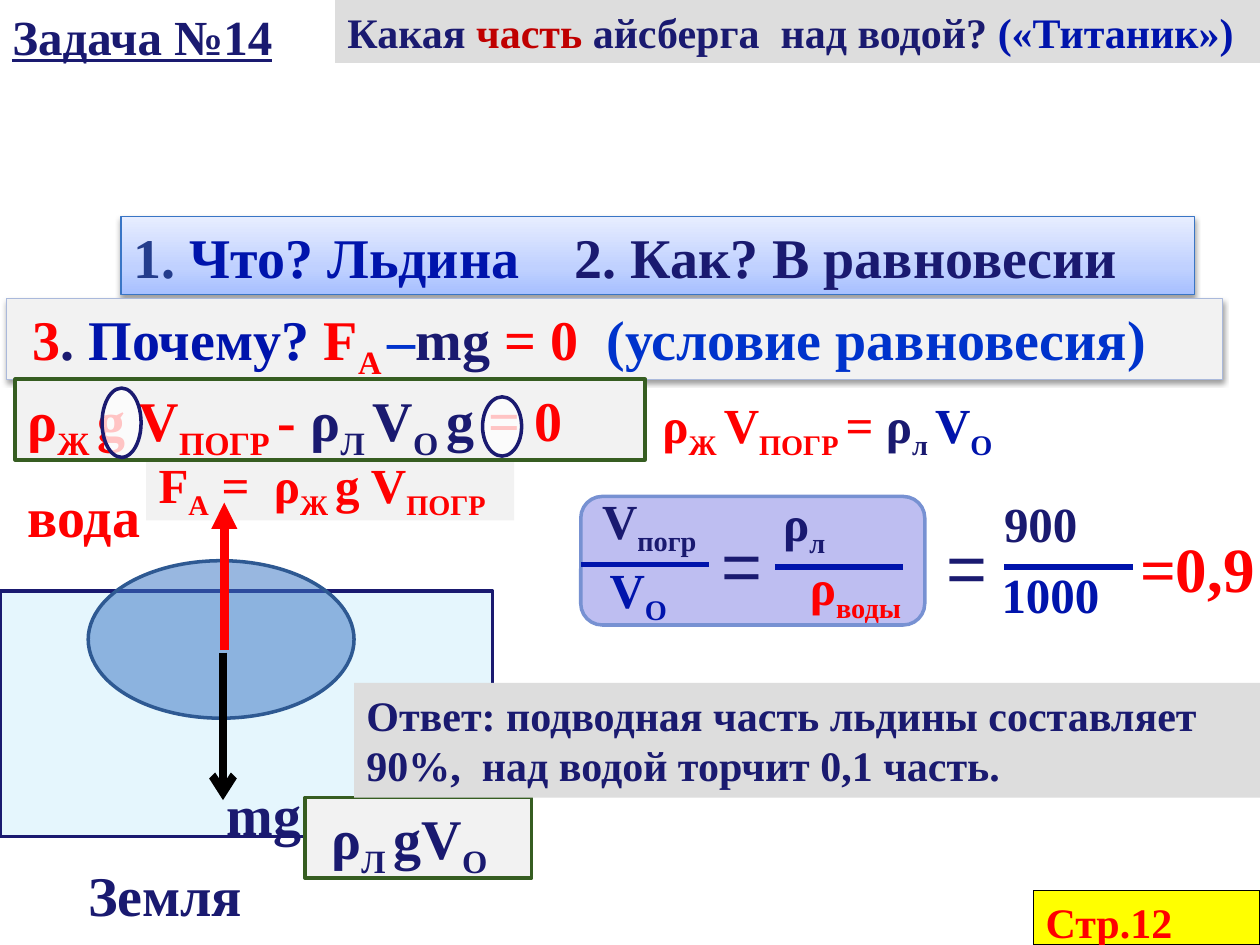
from lxml import etree
from pptx import Presentation
from pptx.dml.color import RGBColor
from pptx.enum.shapes import MSO_CONNECTOR, MSO_SHAPE
from pptx.enum.text import MSO_AUTO_SIZE
from pptx.oxml import parse_xml
from pptx.oxml.ns import nsdecls, qn
from pptx.util import Inches, Pt

COLORS = {
    "navy": "1A1A70", "blue": "0014AC", "bright": "0033CC", "slate": "243D8C",
    "red": "FF0000", "dark_red": "C00000", "black": "000000", "white": "FFFFFF",
    "grey": "DDDDDD", "pale": "F2F2F2", "yellow": "FFFF00", "green": "365D21",
    "water": "00B0F0", "ice": "3E78C6", "ice_edge": "2E5992",
    "lilac": "BEBEF1", "lilac_edge": "7791D2",
    "plan_edge": "3975C5", "reason_edge": "AAB9DB",
}
SUB = True  # marks a run as subscript


def rgb(name):
    return RGBColor.from_string(COLORS[name])


def paint(shape, fill=None, line=None, alpha=None):
    if fill:
        shape.fill.solid()
        shape.fill.fore_color.rgb = rgb(fill)
        if alpha:
            color = shape.fill._xPr.find(qn("a:solidFill"))[0]
            etree.SubElement(color, qn("a:alpha"), val=str(alpha * 1000))
    if line:
        shape.line.color.rgb = rgb(line[0])
        shape.line.width = Pt(line[1])


def add_figure(slide, kind, left, top, width, height, **look):
    figure = slide.shapes.add_shape(
        kind, Inches(left), Inches(top), Inches(width), Inches(height))
    figure.shadow.inherit = False
    paint(figure, **look)
    return figure


def add_text(slide, left, top, width, height, runs, size=28, wrap=True,
             grow=True, font="Times New Roman", bold=True, underline=None, **look):
    """Runs are (text, colour) or (text, colour, SUB)."""
    label = slide.shapes.add_textbox(
        Inches(left), Inches(top), Inches(width), Inches(height))
    paint(label, **look)
    label.text_frame.word_wrap = wrap
    label.text_frame.auto_size = (
        MSO_AUTO_SIZE.SHAPE_TO_FIT_TEXT if grow else MSO_AUTO_SIZE.NONE)
    style = {"name": font, "size": Pt(size), "bold": bold, "underline": underline}
    for text, color, *sub in runs:
        run = label.text_frame.paragraphs[0].add_run()
        run.text = text
        for key, value in style.items():
            setattr(run.font, key, value)
        run.font.color.rgb = rgb(color)
        if sub:
            run.font._element.set("baseline", "-25000")
    return label


def add_line(slide, start, end, color, width, head=None):
    line = slide.shapes.add_connector(
        MSO_CONNECTOR.STRAIGHT, *(Inches(v) for v in (*start, *end)))
    paint(line, line=(color, width))
    if head:
        etree.SubElement(line.line._get_or_add_ln(), qn("a:tailEnd"), type=head)
    etree.SubElement(line._element.spPr, qn("a:effectLst"))


def add_shadow(shape):
    shape._element.spPr.append(parse_xml(
        f'<a:effectLst {nsdecls("a")}><a:outerShdw blurRad="{Pt(3.1)}" '
        f'dist="{Pt(1.6)}" dir="5400000" rotWithShape="0"><a:srgbClr val="000000">'
        '<a:alpha val="38000"/></a:srgbClr></a:outerShdw></a:effectLst>'))


def add_gradient(shape, stops):
    shape.fill.gradient()
    shape.fill.gradient_angle = 90
    stop_list = shape._element.spPr.find(qn("a:gradFill")).find(qn("a:gsLst"))
    for stop in list(stop_list):
        stop_list.remove(stop)
    for position, color in stops:
        stop = etree.SubElement(stop_list, qn("a:gs"), pos=str(position * 1000))
        etree.SubElement(stop, qn("a:srgbClr"), val=color)


def header(slide, left, top):
    add_text(slide, left, top, 2.58, 0.57, [("Задача №14", "navy")], underline=True)
    add_text(slide, left + 2.66, top, 7.34, 0.5, [
        ("Какая ", "navy"), ("часть", "dark_red"),
        (" айсберга  над водой? ", "navy"), ("(«Титаник»)", "blue")],
        size=24, fill="grey")


def iceberg(slide, left, top):
    # Water and floating ice
    add_figure(slide, MSO_SHAPE.RECTANGLE, left, top + 1.13, 3.91, 1.95,
               fill="water", alpha=10, line=("navy", 2))
    add_figure(slide, MSO_SHAPE.OVAL, left + 0.7, top + 0.89, 2.11, 1.25,
               fill="ice", alpha=53, line=("ice_edge", 2))
    # Forces
    add_line(slide, (left + 1.77, top + 1.62), (left + 1.77, top + 2.79),
             "black", 4.5, "arrow")
    for x, y, width, word, color, wrap in [
            (1.7, 2.58, 0.8, "mg", "navy", False),
            (0.6, 3.22, 1.48, "Земля", "navy", True),
            (0.12, 0.21, 1.33, "вода", "red", True)]:
        add_text(slide, left + x, top + y, width, 0.64, [(word, color)],
                 size=32, wrap=wrap)
    add_text(slide, left + 1.16, top, 2.92, 0.57, [
        ("F", "red"), ("A  ", "red", SUB), ("=  ρ", "red"), ("Ж ", "red", SUB),
        ("g V", "red"), ("ПОГР", "red", SUB)], wrap=False, fill="pale")
    add_line(slide, (left + 1.78, top + 1.6), (left + 1.78, top + 0.43),
             "red", 5, "triangle")
    add_text(slide, left + 2.42, top + 2.77, 1.8, 0.64, [
        (" ", "red"), ("ρ", "navy"), ("Л ", "navy", SUB), ("gV", "navy"),
        ("О", "navy", SUB)], size=32, fill="pale", line=("green", 2))


def reasoning(slide, left, top):
    # Questions 1 and 2, the second set at a tab stop
    plan = add_text(slide, left + 0.91, top, 8.52, 0.62, [
        ("1.", "slate"), (" Что? Льдина\t", "blue"),
        ("2. Как? В равновесии", "navy")],
        size=32, grow=False, line=("plan_edge", 0.75))
    add_gradient(plan, [(0, "A6BFFF"), (35, "C0D1FF"), (100, "E7EDFF")])
    add_shadow(plan)
    tabs = etree.SubElement(
        plan.text_frame.paragraphs[0]._p.get_or_add_pPr(), qn("a:tabLst"))
    etree.SubElement(tabs, qn("a:tab"), pos=str(Inches(3.5)), algn="l")
    # Question 3
    reason = add_text(slide, left, top + 0.65, 9.65, 0.64, [
        (" 3", "red"), (". ", "navy"), ("Почему? ", "blue"), ("F", "red"),
        ("A ", "red", SUB), ("–", "bright"), ("mg", "navy"), (" = 0  ", "red"),
        ("(условие равновесия)", "bright")],
        size=32, fill="pale", line=("reason_edge", 0.75))
    add_shadow(reason)
    # Balance with both g crossed out
    add_text(slide, left + 0.07, top + 1.29, 5, 0.64, [
        ("ρ", "red"), ("Ж ", "red", SUB), ("g V", "red"), ("ПОГР ", "red", SUB),
        ("- ", "red"), ("ρ", "navy"), ("Л ", "navy", SUB), ("V", "navy"),
        ("О ", "navy", SUB), ("g ", "navy"), ("= 0", "red")],
        size=32, fill="pale", line=("green", 2))
    for x, y, height in [(3.78, 1.43, 0.47), (0.76, 1.36, 0.55)]:
        add_figure(slide, MSO_SHAPE.OVAL, left + x, top + y, 0.31, height,
                   fill="white", alpha=77, line=("navy", 2))
    add_text(slide, left + 5.11, top + 1.36, 3.13, 0.57, [
        ("ρ", "red"), ("Ж ", "red", SUB), ("V", "red"), ("ПОГР ", "red", SUB),
        ("= ", "red"), ("ρ", "navy"), ("л ", "navy", SUB), ("V", "blue"),
        ("О", "blue", SUB)])


def fraction(slide, left, bar, numerator, denominator):
    """Each part is (x, y, width, runs, wrap), offset from the bar's left end."""
    add_line(slide, (left, bar), (left + 1.02, bar), "blue", 3)
    for x, y, width, runs, wrap in (numerator, denominator):
        add_text(slide, left + x, bar + y, width, 0.57, runs, wrap=wrap)


def ratio(slide, left, top):
    add_figure(slide, MSO_SHAPE.ROUNDED_RECTANGLE, left, top, 2.73, 1.02,
               fill="lilac", line=("lilac_edge", 2))
    for x, y in [(1.02, 0.15), (2.8, 0.17)]:
        add_text(slide, left + x, top + y, 0.55, 0.77, [("=", "navy")],
                 size=40, font="Arial", bold=False)
    fraction(slide, left, top + 0.54,
             (0.07, -0.64, 1.03, [("V", "navy"), ("погр", "navy", SUB)], False),
             (0.13, -0.09, 0.86, [("V", "blue"), ("О", "blue", SUB)], True))
    fraction(slide, left + 1.54, top + 0.56,
             (-0.13, -0.64, 1.88,
              [(" ", "red"), ("ρ", "navy"), ("л", "navy", SUB)], True),
             (0.18, -0.13, 1.17, [("ρ", "red"), ("воды", "red", SUB)], True))
    fraction(slide, left + 3.36, top + 0.56,
             (-0.1, -0.63, 0.79, [("900", "navy")], False),
             (-0.12, -0.07, 1.05, [("1000", "blue")], True))
    add_text(slide, left + 4.34, top + 0.21, 1.48, 0.71, [("=0,9", "red")], size=36)


def conclusion(slide, left, top):
    add_text(slide, left, top, 7.19, 0.91, [
        ("Ответ: подводная часть льдины составляет 90%,  "
         "над водой торчит 0,1 часть.", "navy")], size=24, fill="grey")
    add_text(slide, left + 5.39, top + 1.65, 1.8, 0.43, [("Стр.12", "red")],
             size=24, grow=False, fill="yellow", line=("black", 0.75))


def main():
    deck = Presentation()
    deck.slide_width, deck.slide_height = Inches(10), Inches(7.5)
    slide = deck.slides.add_slide(deck.slide_layouts[6])
    header(slide, 0, 0)
    iceberg(slide, 0, 3.56)
    reasoning(slide, 0.05, 1.72)
    ratio(slide, 4.61, 3.94)
    conclusion(slide, 2.81, 5.42)
    deck.save("out.pptx")


if __name__ == "__main__":
    main()
